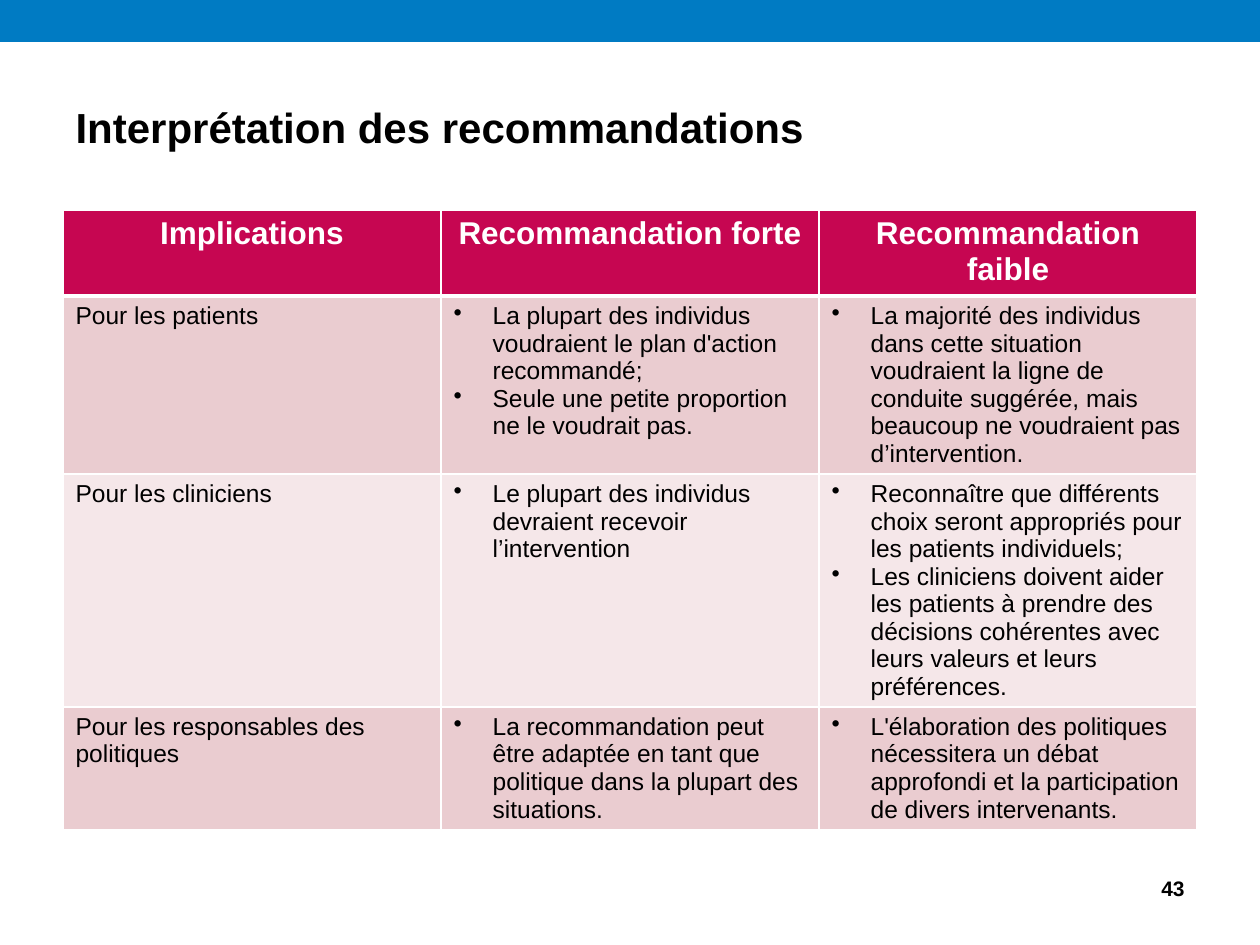
import pptx
import pptx.util
import pptx.dml.color
import pptx.enum.shapes
import pptx.enum.text
import pptx.oxml
import pptx.oxml.ns

SCALE = 914400 / 126  # EMU per px
COLORS = {
    "band": "007BC3",
    "header": "C60651",
    "odd": "EACCD0",
    "even": "F5E7E9",
    "white": "FFFFFF",
    "black": "000000",
}
ALIGN = pptx.enum.text.PP_ALIGN
MIDDLE = pptx.enum.text.MSO_ANCHOR.MIDDLE


def px(*lengths):
    return [pptx.util.Emu(round(length * SCALE)) for length in lengths]


def style(para, size, color, bold, align):
    para.alignment = align
    for span in para.runs:
        span.font.name = "Arial"
        span.font.size = pptx.util.Pt(size)
        span.font.bold = bold
        span.font.color.rgb = pptx.dml.color.RGBColor.from_string(COLORS[color])


deck = pptx.Presentation()
deck.slide_width, deck.slide_height = px(1260, 945)
page = deck.slides.add_slide(deck.slide_layouts[5])

# Top band
band = page.shapes.add_shape(pptx.enum.shapes.MSO_SHAPE.RECTANGLE, *px(0, 0, 1260, 42))
band.shadow.inherit = False
band.fill.solid()
band.fill.fore_color.rgb = pptx.dml.color.RGBColor.from_string(COLORS["band"])
band.line.fill.background()

# Title
title = page.shapes.title
title.left, title.top, title.width, title.height = px(63, 74, 1134, 105)
title.text_frame.text = "Interprétation des recommandations"
title.text_frame.vertical_anchor = MIDDLE
style(title.text_frame.paragraphs[0], 24, "black", True, ALIGN.LEFT)

# Table: a header row, then one row per audience with bulleted lists
rows = [
    [["Implications"], ["Recommandation forte"], ["Recommandation faible"]],
    [
        ["Pour les patients"],
        ["La plupart des individus voudraient le plan d'action recommandé;",
         "Seule une petite proportion ne le voudrait pas."],
        ["La majorité des individus dans cette situation voudraient la ligne de conduite "
         "suggérée, mais beaucoup ne voudraient pas d’intervention."],
    ],
    [
        ["Pour les cliniciens"],
        ["Le plupart des individus devraient recevoir l’intervention"],
        ["Reconnaître que différents choix seront appropriés pour les patients individuels;",
         "Les cliniciens doivent aider les patients à prendre des décisions cohérentes avec "
         "leurs valeurs et leurs préférences."],
    ],
    [
        ["Pour les responsables des politiques"],
        ["La recommandation peut être adaptée en tant que politique dans la plupart des "
         "situations."],
        ["L'élaboration des politiques nécessitera un débat approfondi et la participation "
         "de divers intervenants."],
    ],
]
row_heights = [86, 178, 233, 122]
table = page.shapes.add_table(4, 3, *px(63, 210, 1134, sum(row_heights))).table
for row, height in zip(table.rows, row_heights):
    row.height = px(height)[0]

for r, row in enumerate(rows):
    for c, lines in enumerate(row):
        cell = table.cell(r, c)
        header = r == 0
        fill = "header" if header else "odd" if r % 2 else "even"
        cell.fill.solid()
        cell.fill.fore_color.rgb = pptx.dml.color.RGBColor.from_string(COLORS[fill])
        cell.text_frame.text = "\n".join(lines)
        for para in cell.text_frame.paragraphs:
            if not header and c > 0:
                properties = para._p.get_or_add_pPr()
                indent = pptx.util.Inches(0.31)
                properties.set("marL", str(indent))
                properties.set("indent", str(-indent))
                bullet = pptx.oxml.parse_xml(
                    f'<a:buChar {pptx.oxml.ns.nsdecls("a")} char="•"/>')
                properties.append(bullet)
            if header:
                style(para, 18, "white", True, ALIGN.CENTER)
            else:
                style(para, 14, "black", False, ALIGN.LEFT)

        # White borders, thicker between header and body
        widths = {"L": 1, "R": 1, "T": 3 if r == 1 else 1, "B": 3 if header else 1}
        for index, (side, width) in enumerate(widths.items()):
            border = pptx.oxml.parse_xml(
                f'<a:ln{side} {pptx.oxml.ns.nsdecls("a")} w="{pptx.util.Pt(width)}">'
                f'<a:solidFill><a:srgbClr val="{COLORS["white"]}"/></a:solidFill>'
                f'</a:ln{side}>')
            cell._tc.get_or_add_tcPr().insert(index, border)

# Page number
number = page.shapes.add_textbox(*px(903, 863, 294, 50))
number.text_frame.word_wrap = True
number.text_frame.vertical_anchor = MIDDLE
number.text_frame.text = "43"
style(number.text_frame.paragraphs[0], 12, "black", True, ALIGN.RIGHT)

deck.save("out.pptx")
